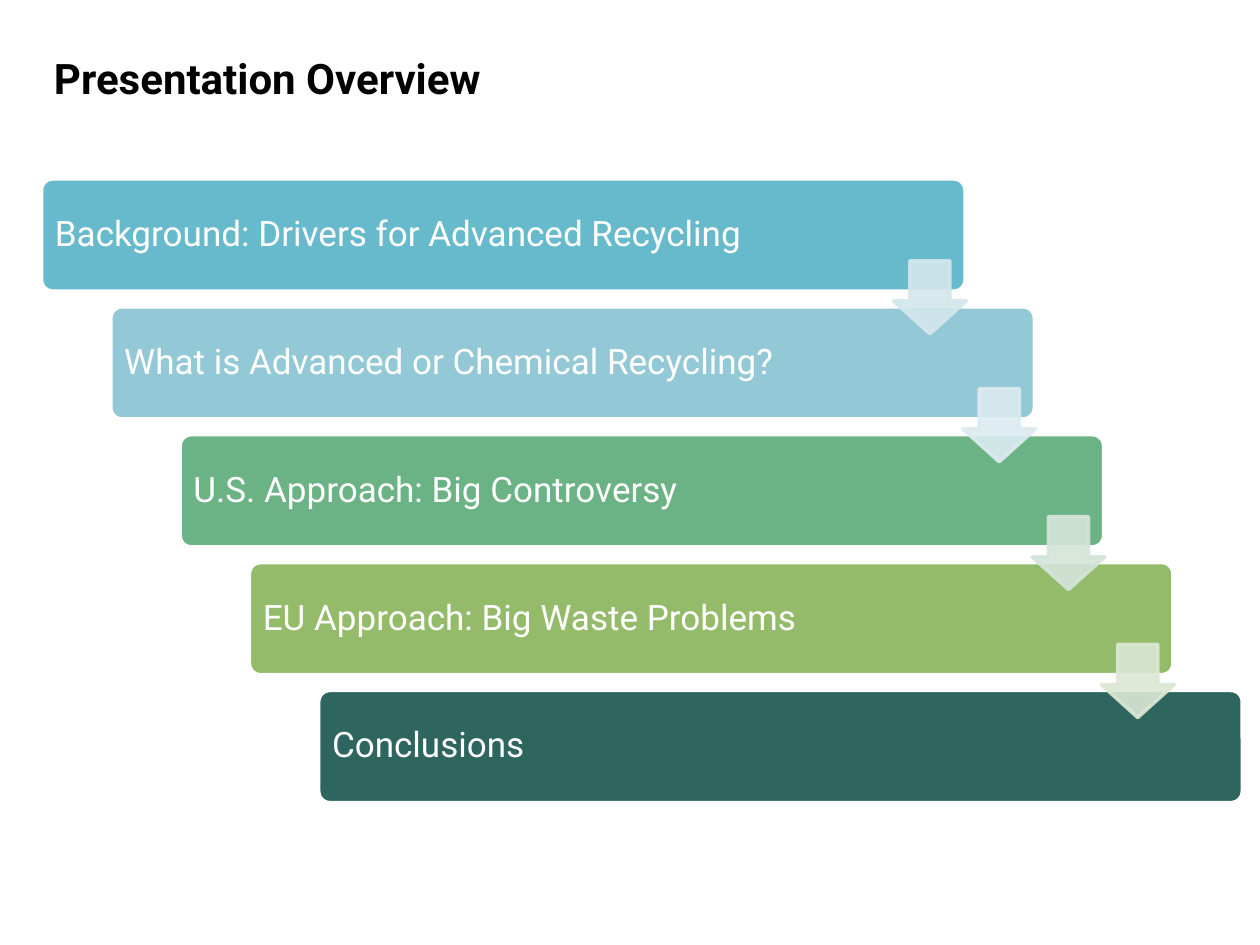
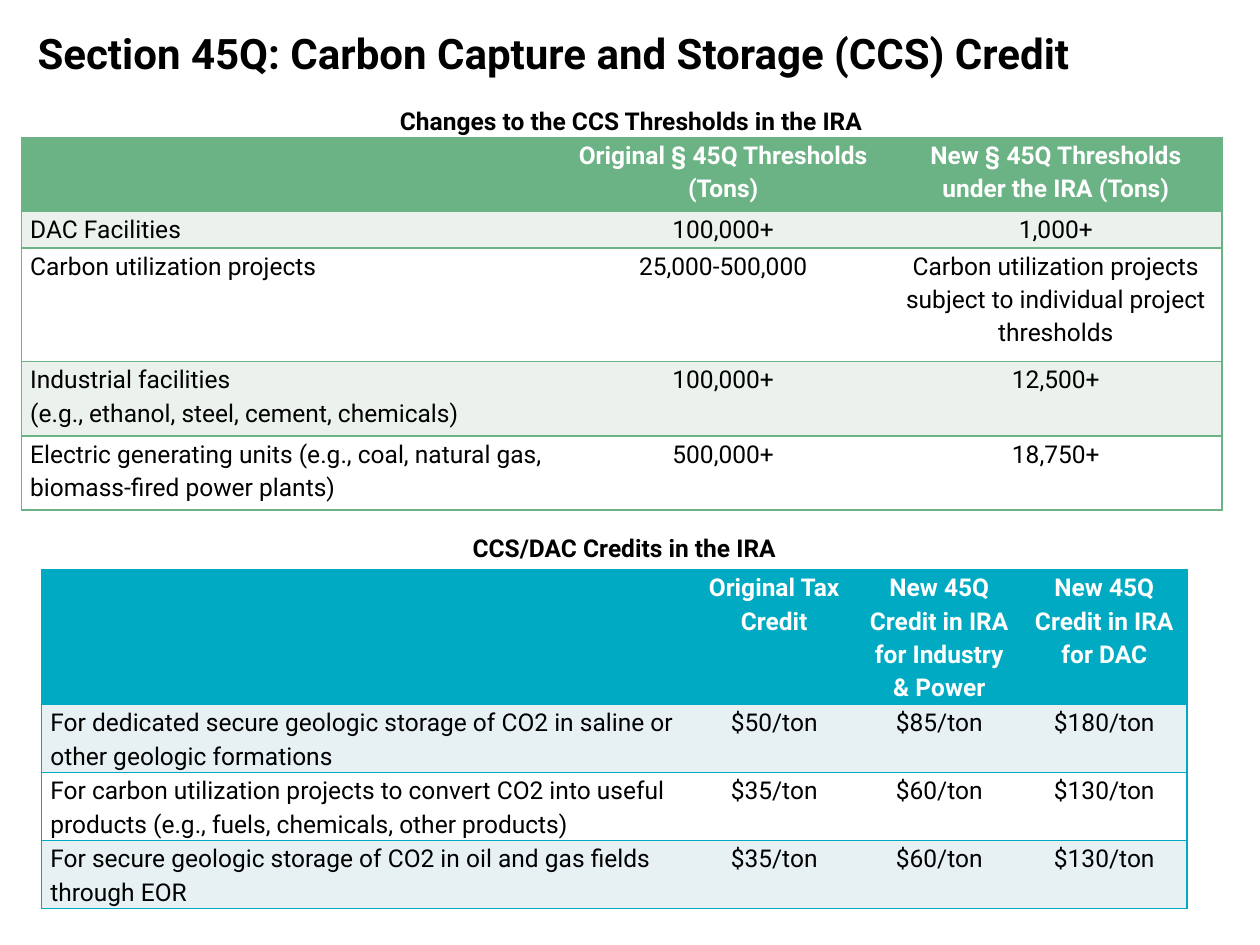
import pptx
import pptx.dml.color
import pptx.enum.shapes
import pptx.enum.text
import pptx.oxml.ns
import pptx.util
from lxml import etree

Inches = pptx.util.Inches
Pt = pptx.util.Pt
PP_ALIGN = pptx.enum.text.PP_ALIGN
MSO_ANCHOR = pptx.enum.text.MSO_ANCHOR
MSO_SHAPE = pptx.enum.shapes.MSO_SHAPE

# Shared look
FONT = "Roboto"
BLACK, WHITE = "000000", "FFFFFF"
GREEN, GREEN_TINT = "6BB284", "EBF2ED"
TEAL, TEAL_TINT = "00AAC2", "E7F1F4"
TITLE = {"size": Pt(24), "bold": True}
CAPTION = {"size": Pt(14), "bold": True}
BODY = {"size": Pt(14), "bold": False}
STEP = {"size": Pt(20), "bold": False}

# Slide content
STEPS = [
    ("Background: Drivers for Advanced Recycling", "67BACB"),
    ("What is Advanced or Chemical Recycling?", "93C9D6"),
    ("U.S. Approach: Big Controversy", GREEN),
    ("EU Approach: Big Waste Problems", "93BB69"),
    ("Conclusions", "2E655F"),
]
ARROW_COLORS = ["D3E7EC", "DCEBF0", "D4E4D9", "DCE7D4"]

THRESHOLDS = [
    ["", "Original § 45Q Thresholds (Tons)", "New § 45Q Thresholds under the IRA (Tons)"],
    ["DAC Facilities", "100,000+", "1,000+"],
    ["Carbon utilization projects", "25,000-500,000",
     "Carbon utilization projects subject to individual project thresholds"],
    ["Industrial facilities\n(e.g., ethanol, steel, cement, chemicals)", "100,000+", "12,500+"],
    ["Electric generating units (e.g., coal, natural gas, biomass-fired power plants)",
     "500,000+", "18,750+"],
]
CREDITS = [
    ["", "Original Tax Credit", "New 45Q Credit in IRA for Industry & Power",
     "New 45Q Credit in IRA for DAC"],
    ["For dedicated secure geologic storage of CO2 in saline or other geologic formations",
     "$50/ton", "$85/ton", "$180/ton"],
    ["For carbon utilization projects to convert CO2 into useful products "
     "(e.g., fuels, chemicals, other products)", "$35/ton", "$60/ton", "$130/ton"],
    ["For secure geologic storage of CO2 in oil and gas fields through EOR",
     "$35/ton", "$60/ton", "$130/ton"],
]


def rgb(color):
    return pptx.dml.color.RGBColor.from_string(color)


def apply_format(target, values):
    for name, value in values.items():
        setattr(target, name, value)


def write_text(frame, text, font, color, alignment=PP_ALIGN.LEFT, line_spacing=1.0):
    frame.word_wrap = True
    for index, line in enumerate(text.split("\n")):
        paragraph = frame.add_paragraph() if index else frame.paragraphs[0]
        apply_format(paragraph, {"alignment": alignment, "line_spacing": line_spacing})
        run = paragraph.add_run()
        run.text = line
        apply_format(run.font, {"name": FONT, **font})
        run.font.color.rgb = rgb(color)


def add_label(slide, text, box, font, **options):
    shape = slide.shapes.add_textbox(*map(Inches, box))
    shape.text_frame.vertical_anchor = MSO_ANCHOR.MIDDLE
    write_text(shape.text_frame, text, font, BLACK, **options)


def add_filled_shape(slide, kind, box, fill, line, adjustments):
    shape = slide.shapes.add_shape(kind, *map(Inches, box))
    shape.shadow.inherit = False
    shape.fill.solid()
    shape.fill.fore_color.rgb = rgb(fill)
    shape.line.color.rgb = rgb(line)
    shape.line.width = Pt(2)
    for index, value in enumerate(adjustments):
        shape.adjustments[index] = value
    return shape


def add_step_bar(slide, text, color, left, top):
    bar = add_filled_shape(slide, MSO_SHAPE.ROUNDED_RECTANGLE, (left, top, 7.33, 0.89),
                           color, WHITE, [0.1])
    apply_format(bar.text_frame, {"margin_left": Inches(0.08),
                                  "vertical_anchor": MSO_ANCHOR.MIDDLE})
    write_text(bar.text_frame, text, STEP, WHITE, line_spacing=0.9)


def add_step_arrow(slide, color, left, top):
    arrow = add_filled_shape(slide, MSO_SHAPE.DOWN_ARROW, (left, top, 0.58, 0.58),
                             color, color, [0.55, 0.45])
    properties = arrow.fill._xPr
    for color_element in properties.iter(pptx.oxml.ns.qn("a:srgbClr")):
        etree.SubElement(color_element, pptx.oxml.ns.qn("a:alpha"), val="90000")


def add_cell_border(cell, side, color):
    """Draw one cell edge, or clear it when color is None."""
    qn = pptx.oxml.ns.qn
    line = etree.SubElement(cell._tc.get_or_add_tcPr(), qn("a:ln" + side), w=str(Pt(1)))
    if color is None:
        etree.SubElement(line, qn("a:noFill"))
    else:
        fill = etree.SubElement(line, qn("a:solidFill"))
        etree.SubElement(fill, qn("a:srgbClr"), val=color)


def add_data_table(slide, rows, left, top, widths, heights, accent, tint):
    box = (left, top, sum(widths), sum(heights))
    frame = slide.shapes.add_table(len(rows), len(widths), *map(Inches, box))
    table = frame.table
    apply_format(table, {"first_row": False, "horz_banding": False})
    for column, width in zip(table.columns, widths):
        column.width = Inches(width)
    last = len(widths) - 1
    for row_index, (values, height) in enumerate(zip(rows, heights)):
        table.rows[row_index].height = Inches(height)
        header = row_index == 0
        fill = accent if header else (tint if row_index % 2 else WHITE)
        for column_index, value in enumerate(values):
            cell = table.cell(row_index, column_index)
            apply_format(cell, {"margin_left": Inches(0.07), "margin_right": Inches(0.07),
                                "margin_top": 0, "margin_bottom": 0})
            add_cell_border(cell, "L", accent if column_index == 0 else None)
            add_cell_border(cell, "R", accent if column_index == last else None)
            add_cell_border(cell, "T", accent)
            add_cell_border(cell, "B", accent)
            cell.fill.solid()
            cell.fill.fore_color.rgb = rgb(fill)
            if value:
                write_text(cell.text_frame, value, CAPTION if header else BODY,
                           WHITE if header else BLACK,
                           PP_ALIGN.CENTER if column_index else PP_ALIGN.LEFT, 1.15)


def build_overview(slide):
    add_label(slide, "Presentation Overview", (0.33, 0.18, 9.52, 0.87), TITLE)
    # Staircase of bars, then the arrows that link them
    shift = 0.55
    drop = (5.48 - 1.42) / (len(STEPS) - 1)
    for index, (text, color) in enumerate(STEPS):
        add_step_bar(slide, text, color, 0.33 + index * shift, 1.42 + index * drop)
    for index, color in enumerate(ARROW_COLORS):
        add_step_arrow(slide, color, 7.09 + index * shift, 2.07 + index * drop)


def build_credit_tables(slide):
    add_label(slide, "Section 45Q: Carbon Capture and Storage (CCS) Credit",
              (0.2, 0.18, 9.52, 0.48), TITLE)
    # Thresholds
    add_data_table(slide, THRESHOLDS, 0.17, 1.09, [4.25, 2.64, 2.64],
                   [0.59, 0.29, 0.9, 0.59, 0.59], GREEN, GREEN_TINT)
    add_label(slide, "Changes to the CCS Thresholds in the IRA",
              (0.34, 0.79, 9.34, 0.34), CAPTION, alignment=PP_ALIGN.CENTER)
    # Credits
    add_data_table(slide, CREDITS, 0.33, 4.52, [5.16] + [1.31] * 3,
                   [1.07] + [0.54] * 3, TEAL, TEAL_TINT)
    add_label(slide, "CCS/DAC Credits in the IRA",
              (0.33, 4.18, 9.25, 0.34), CAPTION, alignment=PP_ALIGN.CENTER)


def main():
    presentation = pptx.Presentation()
    presentation.slide_width = Inches(10)
    presentation.slide_height = Inches(7.5)
    for build in (build_overview, build_credit_tables):
        build(presentation.slides.add_slide(presentation.slide_layouts[6]))
    presentation.save("out.pptx")


if __name__ == "__main__":
    main()
